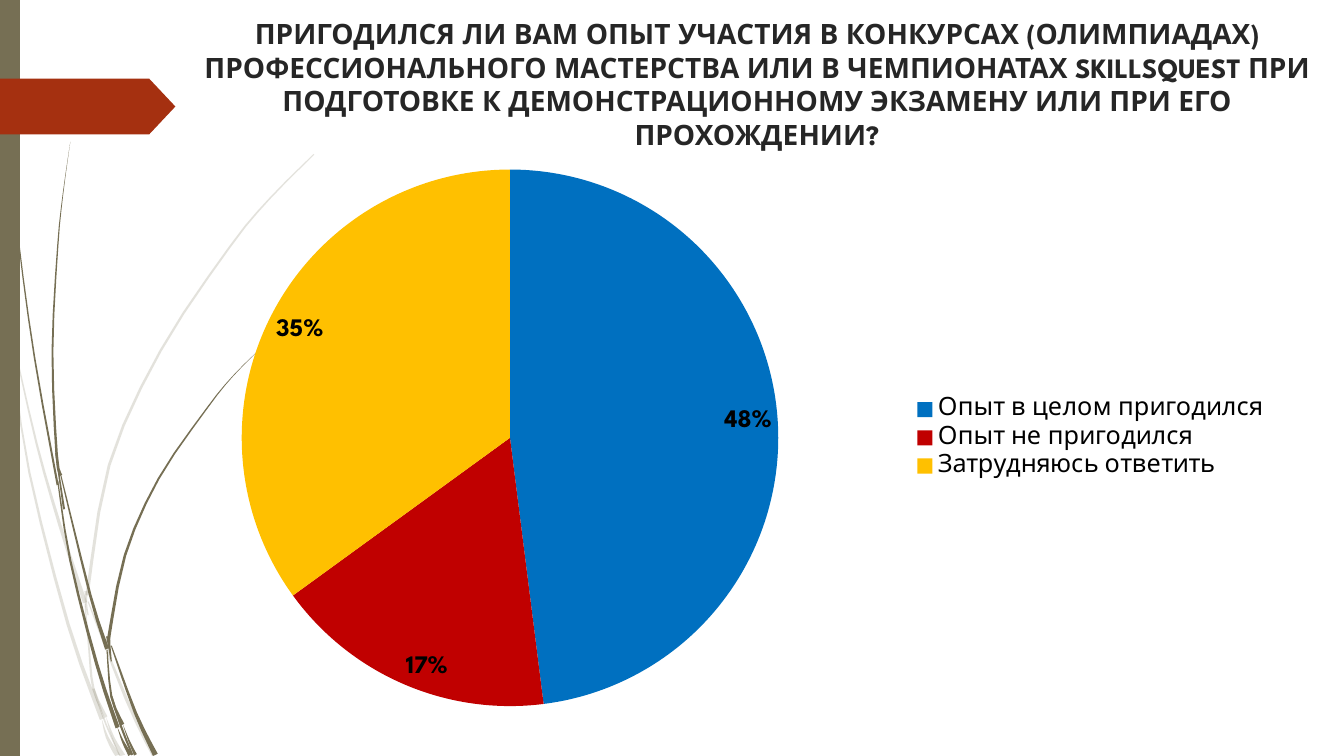
from dataclasses import dataclass
from math import hypot

from lxml.etree import SubElement
from pptx import Presentation
from pptx.chart.data import CategoryChartData
from pptx.dml.color import RGBColor
from pptx.enum.chart import XL_CHART_TYPE, XL_LABEL_POSITION, XL_LEGEND_POSITION
from pptx.enum.shapes import MSO_SHAPE
from pptx.enum.text import MSO_ANCHOR, PP_ALIGN
from pptx.oxml import parse_xml
from pptx.oxml.ns import nsdecls, qn
from pptx.util import Pt

PX = 9525
SLIDE_WIDTH, SLIDE_HEIGHT = 1280, 720
CURVE_STEPS = 3


@dataclass(frozen=True)
class Theme:
    font: str = "League Spartan"
    title_size: int = 20
    chart_size: int = 18
    title_color: str = "262626"
    chart_color: str = "000000"
    grass: str = "766F54"
    tag: str = "A53010"
    slices: tuple = ("0070C0", "C00000", "FFC000")


THEME = Theme()

TITLE = (
    "ПРИГОДИЛСЯ ЛИ ВАМ ОПЫТ УЧАСТИЯ В КОНКУРСАХ (ОЛИМПИАДАХ) "
    "ПРОФЕССИОНАЛЬНОГО МАСТЕРСТВА ИЛИ В ЧЕМПИОНАТАХ SKILLSQUEST ПРИ "
    "ПОДГОТОВКЕ К ДЕМОНСТРАЦИОННОМУ ЭКЗАМЕНУ ИЛИ ПРИ ЕГО ПРОХОЖДЕНИИ?"
)
ANSWERS = {
    "Опыт в целом пригодился": 48,
    "Опыт не пригодился": 17,
    "Затрудняюсь ответить": 35,
}

# Each blade: width at the top, width at the bottom, points of its spine.
PALE_BLADES = [
    (3, 0, [(0, 278), (5, 304), (11, 336)]),
    (1, 4, [(14, 331), (35, 423), (57, 500), (81, 574)]),
    (1, 5, [(84, 573), (120, 665), (147, 720)]),
    (0, 5, [(101, 683), (108, 703), (117, 720)]),
    (1, 4, [(11, 336), (28, 450), (65, 595), (97, 685)]),
    (1, 3, [(81, 575), (85, 620), (89, 656), (101, 683)]),
    (1, 3, [(299, 147), (257, 189), (219, 235), (153, 334), (104, 443), (83, 567)]),
    (0, 5, [(97, 685), (102, 702), (112, 720)]),
    (3, 1, [(82, 563), (82, 575), (84, 586)]),
    (2, 1, [(89, 656), (101, 690), (114, 720)]),
]
DARK_BLADES = [
    (0, 2, [(3, 0), (6, 105), (17, 223), (33, 341), (55, 462)]),
    (1, 4, [(58, 453), (86, 567), (102, 618)]),
    (1, 5, [(106, 615), (129, 679), (148, 719)]),
    (1, 4, [(55, 458), (67, 534), (92, 632), (112, 693)]),
    (0, 3, [(67, 135), (60, 185), (55, 235), (50, 335), (54, 433), (58, 453)]),
    (0, 3, [(117, 690), (123, 706), (129, 719)]),
    (1, 2, [(53, 431), (57, 458), (61, 485)]),
    (0, 3, [(250, 330), (222, 358), (197, 389), (151, 456), (119, 529), (103, 611)]),
    (0, 4, [(112, 693), (117, 706), (124, 719)]),
    (1, 3, [(102, 619), (106, 663), (117, 690)]),
    (4, 1, [(103, 606), (104, 615), (106, 630)]),
    (2, 2, [(106, 663), (115, 691), (126, 719)]),
]


def rgb(color):
    return RGBColor.from_string(color)


def paint(shape, color, opacity=100):
    shape.shadow.inherit = False
    shape.fill.solid()
    shape.fill.fore_color.rgb = rgb(color)
    shape.line.fill.background()
    if opacity < 100:
        color_element = shape.fill._xPr.find(qn("a:solidFill"))[0]
        SubElement(color_element, qn("a:alpha"), val=str(opacity * 1000))


def format_font(font, size, color, bold=False):
    font.name = THEME.font
    font.size = Pt(size)
    font.bold = bold
    font.color.rgb = rgb(color)


def write_text(frame, text, size, color, bold=False, align=PP_ALIGN.LEFT):
    frame.word_wrap = True
    frame.vertical_anchor = MSO_ANCHOR.MIDDLE
    paragraph = frame.paragraphs[0]
    paragraph.alignment = align
    run = paragraph.add_run()
    run.text = text
    format_font(run.font, size, color, bold)


def smooth(points):
    """Catmull-Rom curve through the points."""
    padded = [points[0], *points, points[-1]]
    curve = []
    for a, b, c, d in zip(padded, padded[1:], padded[2:], padded[3:]):
        for step in range(CURVE_STEPS):
            t = step / CURVE_STEPS
            curve.append(tuple(
                (2 * q + (r - p) * t + (2 * p - 5 * q + 4 * r - s) * t ** 2
                 + (3 * q - p - 3 * r + s) * t ** 3) / 2
                for p, q, r, s in zip(a, b, c, d)
            ))
    return curve + [points[-1]]


def add_blade(slide, spine, top_width, bottom_width, opacity):
    curve = smooth(spine)
    last = len(curve) - 1
    left, right = [], []
    for index, (x, y) in enumerate(curve):
        before, after = curve[max(index - 1, 0)], curve[min(index + 1, last)]
        dx, dy = after[0] - before[0], after[1] - before[1]
        half = (top_width + (bottom_width - top_width) * index / last) / 2 / hypot(dx, dy)
        for side, sign in ((left, 1), (right, -1)):
            edge_x = max(x - sign * dy * half, 0)
            edge_y = min(max(y + sign * dx * half, 0), SLIDE_HEIGHT)
            side.append((edge_x * PX, edge_y * PX))
    outline = left + right[::-1]
    builder = slide.shapes.build_freeform(*outline[0])
    builder.add_line_segments(outline[1:], close=True)
    paint(builder.convert_to_shape(), THEME.grass, opacity)


def add_side_decoration(slide, left, top, width, height):
    for blades, opacity in ((PALE_BLADES, 20), (DARK_BLADES, 100)):
        for top_width, bottom_width, spine in blades:
            placed = [(left + x, top + y) for x, y in spine]
            add_blade(slide, placed, top_width, bottom_width, opacity)
    bar = slide.shapes.add_shape(
        MSO_SHAPE.RECTANGLE, left * PX, top * PX, width * PX, height * PX)
    paint(bar, THEME.grass)
    tag = slide.shapes.add_shape(
        MSO_SHAPE.PENTAGON, left * PX, (top + 75) * PX, 167 * PX, 53 * PX)
    tag.adjustments[0] = 0.47
    paint(tag, THEME.tag)


def place_title(slide, left, top, width, height):
    title = slide.shapes.title
    title.left, title.top, title.width, title.height = (
        length * PX for length in (left, top, width, height))
    write_text(title.text_frame, TITLE, THEME.title_size, THEME.title_color,
               bold=True, align=PP_ALIGN.CENTER)


def set_plot_layout(chart, x, y, w, h):
    """Fix the plot area, in fractions of the chart."""
    plot_area = chart._chartSpace.chart.plotArea
    for layout in plot_area.findall(qn("c:layout")):
        plot_area.remove(layout)
    values = "".join(
        f'<c:{name} val="{value}"/>'
        for name, value in (("layoutTarget", "inner"), ("xMode", "edge"), ("yMode", "edge"),
                            ("x", x), ("y", y), ("w", w), ("h", h)))
    plot_area.insert(0, parse_xml(
        f'<c:layout {nsdecls("c")}><c:manualLayout>{values}</c:manualLayout></c:layout>'))


def add_answers_pie(slide, left, top, width, height):
    data = CategoryChartData()
    data.categories = list(ANSWERS)
    data.add_series("Series 1", list(ANSWERS.values()))
    chart = slide.shapes.add_chart(
        XL_CHART_TYPE.PIE, left * PX, top * PX, width * PX, height * PX, data).chart
    chart.has_title = False
    format_font(chart.font, THEME.chart_size, THEME.chart_color)
    chart.has_legend = True
    chart.legend.position = XL_LEGEND_POSITION.RIGHT
    chart.legend.include_in_layout = False
    set_plot_layout(chart, 0.11, 0.02, 0.46, 0.96)

    plot = chart.plots[0]
    plot.vary_by_categories = True
    for index, color in enumerate(THEME.slices):
        fill = plot.series[0].points[index].format.fill
        fill.solid()
        fill.fore_color.rgb = rgb(color)
    plot.has_data_labels = True
    labels = plot.data_labels
    labels.show_value = False
    labels.show_percentage = True
    labels.number_format = "0%"
    labels.number_format_is_linked = False
    labels.position = XL_LABEL_POSITION.INSIDE_END
    format_font(labels.font, THEME.chart_size, THEME.chart_color, bold=True)


def main():
    presentation = Presentation()
    presentation.slide_width = SLIDE_WIDTH * PX
    presentation.slide_height = SLIDE_HEIGHT * PX
    slide = presentation.slides.add_slide(presentation.slide_layouts.get_by_name("Title Only"))
    add_side_decoration(slide, 0, 0, 19, SLIDE_HEIGHT)
    place_title(slide, 176, 13, 1090, 134)
    add_answers_pie(slide, 108, 148, 1111, 538)
    presentation.save("out.pptx")


if __name__ == "__main__":
    main()
